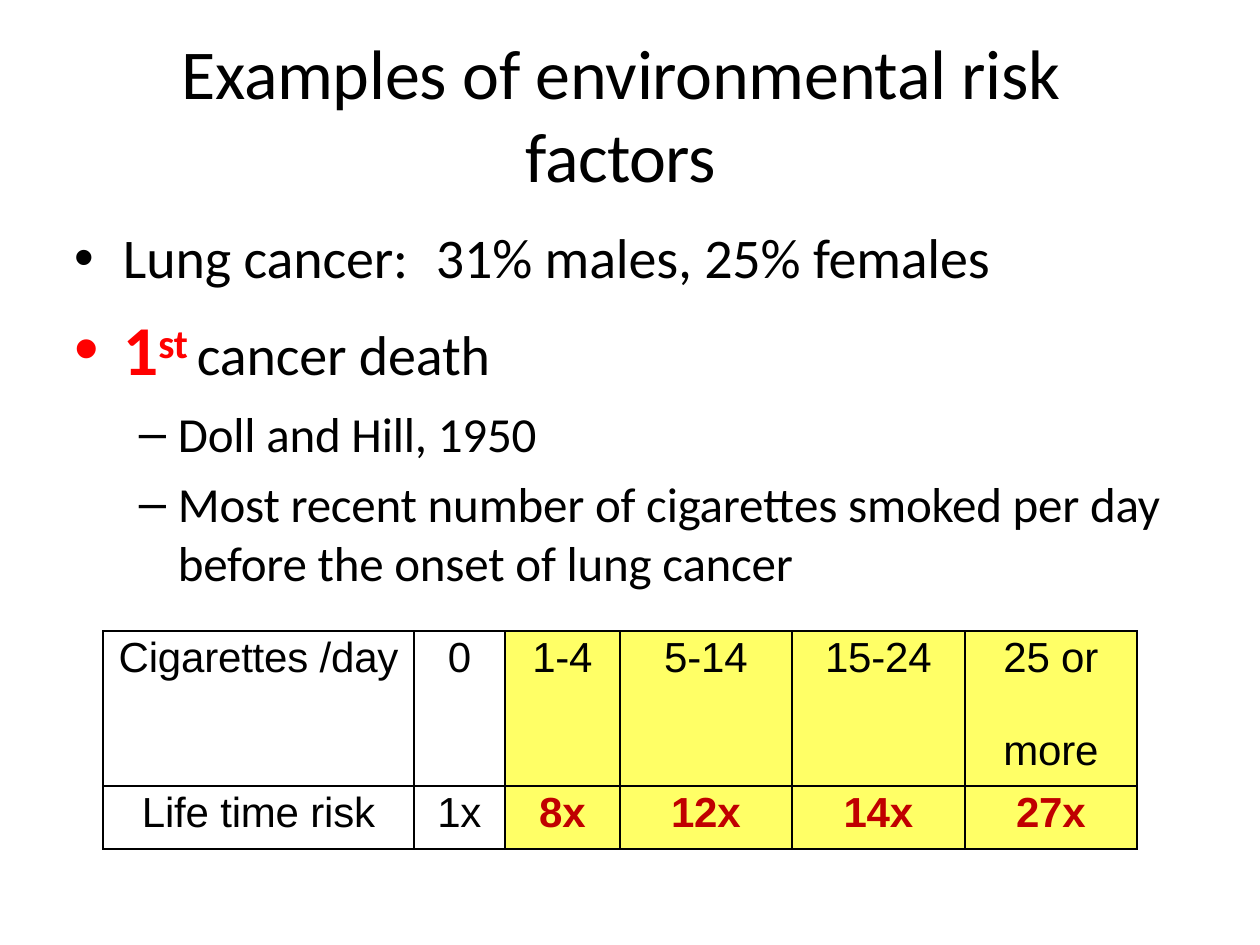
from lxml.etree import SubElement
from pptx import Presentation
from pptx.dml.color import RGBColor
from pptx.enum.text import MSO_ANCHOR, PP_ALIGN
from pptx.oxml.ns import qn
from pptx.util import Emu, Pt

PX = 914400 // 126
BLACK = RGBColor(0, 0, 0)
RED = RGBColor(255, 0, 0)
DARK_RED = RGBColor(0xC0, 0, 0)
YELLOW = RGBColor(0xFF, 0xFF, 0x66)
TAB_STOP = 362

# Per level: left margin, hanging indent (px), bullet character
LEVELS = [(49, -48, "•"), (104, -39, "–")]
# Level, space before (pt), runs of (text, size, colour, bold, baseline)
BULLETS = [
    (0, 0, [("Lung cancer:\t31% males, 25% females", 32, BLACK, False, 0)]),
    (0, 9, [("1", 40, RED, True, 0), ("st ", 40, RED, True, 25000),
            ("cancer death", 32, BLACK, False, 0)]),
    (1, 7.5, [("Doll and Hill, 1950", 28, BLACK, False, 0)]),
    (1, 6.5, [("Most recent number of cigarettes smoked per day "
               "before the onset of lung cancer", 28, BLACK, False, 0)]),
]
COLUMN_WIDTHS = [311, 91, 115, 172, 173, 172]
ROW_HEIGHTS = [155, 63]
# Each cell is a list of its paragraphs
RISK_ROWS = [
    [["Cigarettes /day"], ["0"], ["1-4"], ["5-14"], ["15-24"],
     ["25 or", "more"]],
    [["Life time risk"], ["1x"], ["8x"], ["12x"], ["14x"], ["27x"]],
]
FIRST_SMOKER_COLUMN = 2


def px(length):
    return Emu(length * PX)


def add_run(paragraph, text, size, color=BLACK, bold=False, font="Calibri",
            spacing=-10):
    run = paragraph.add_run()
    run.text = text
    run.font.name = font
    run.font.size = Pt(size)
    run.font.bold = bold
    run.font.color.rgb = color
    run.font._element.set("spc", str(spacing))
    return run


def add_text_frame(slide, left, top, width, height):
    box = slide.shapes.add_textbox(px(left), px(top), px(width), px(height))
    frame = box.text_frame
    frame.word_wrap = True
    frame.margin_left = frame.margin_right = 0
    frame.margin_top = frame.margin_bottom = 0
    return frame


def add_title(slide, left, top, width, height):
    paragraph = add_text_frame(slide, left, top, width, height).paragraphs[0]
    paragraph.alignment = PP_ALIGN.CENTER
    add_run(paragraph, "Examples of environmental risk ", 40, spacing=-13)
    add_run(paragraph, "factors", 40, spacing=-30)


def set_bullet(paragraph, level):
    margin, indent, character = LEVELS[level]
    properties = paragraph._p.get_or_add_pPr()
    properties.set("marL", str(px(margin)))
    properties.set("indent", str(px(indent)))
    SubElement(properties, qn("a:buFont"), typeface="Arial")
    SubElement(properties, qn("a:buChar"), char=character)
    tabs = SubElement(properties, qn("a:tabLst"))
    for position in (margin, TAB_STOP):
        SubElement(tabs, qn("a:tab"), pos=str(px(position)), algn="l")
    paragraph.level = level


def add_bullets(slide, left, top, width, height):
    frame = add_text_frame(slide, left, top, width, height)
    for index, (level, space_before, runs) in enumerate(BULLETS):
        paragraph = frame.add_paragraph() if index else frame.paragraphs[0]
        set_bullet(paragraph, level)
        paragraph.space_before = Pt(space_before)
        for text, size, color, bold, baseline in runs:
            run = add_run(paragraph, text, size, color, bold)
            if baseline:
                run.font._element.set("baseline", str(baseline))


def set_borders(cell):
    properties = cell._tc.get_or_add_tcPr()
    for position, side in enumerate(("a:lnL", "a:lnR", "a:lnT", "a:lnB")):
        line = SubElement(properties, qn(side), w=str(Pt(1)))
        fill = SubElement(line, qn("a:solidFill"))
        SubElement(fill, qn("a:srgbClr"), val=str(BLACK))
        properties.insert(position, line)


def fill_cell(cell, lines, smoker, result):
    cell.margin_left = cell.margin_right = cell.margin_bottom = 0
    cell.margin_top = px(4)
    cell.vertical_anchor = MSO_ANCHOR.TOP
    if smoker:
        cell.fill.solid()
        cell.fill.fore_color.rgb = YELLOW
    else:
        cell.fill.background()
    set_borders(cell)
    highlight = smoker and result
    frame = cell.text_frame
    for index, text in enumerate(lines):
        paragraph = frame.add_paragraph() if index else frame.paragraphs[0]
        paragraph.alignment = PP_ALIGN.CENTER
        if index:
            paragraph.space_before = Pt(26)
        add_run(paragraph, text, 24, DARK_RED if highlight else BLACK,
                highlight, "Arial")


def add_risk_table(slide, left, top):
    table = slide.shapes.add_table(
        len(ROW_HEIGHTS), len(COLUMN_WIDTHS), px(left), px(top),
        px(sum(COLUMN_WIDTHS)), px(sum(ROW_HEIGHTS))).table
    table.first_row = table.horz_banding = False
    for column, width in zip(table.columns, COLUMN_WIDTHS):
        column.width = px(width)
    for row_index, (row, height) in enumerate(zip(table.rows, ROW_HEIGHTS)):
        row.height = px(height)
        for column_index, lines in enumerate(RISK_ROWS[row_index]):
            fill_cell(row.cells[column_index], lines,
                      column_index >= FIRST_SMOKER_COLUMN, row_index == 1)


def main():
    presentation = Presentation()
    presentation.slide_width = px(1260)
    presentation.slide_height = px(945)
    slide = presentation.slides.add_slide(presentation.slide_layouts[6])
    add_title(slide, 121, 29, 1000, 170)
    add_bullets(slide, 74, 223, 1099, 368)
    add_risk_table(slide, 103, 631)
    presentation.save("out.pptx")


if __name__ == "__main__":
    main()
